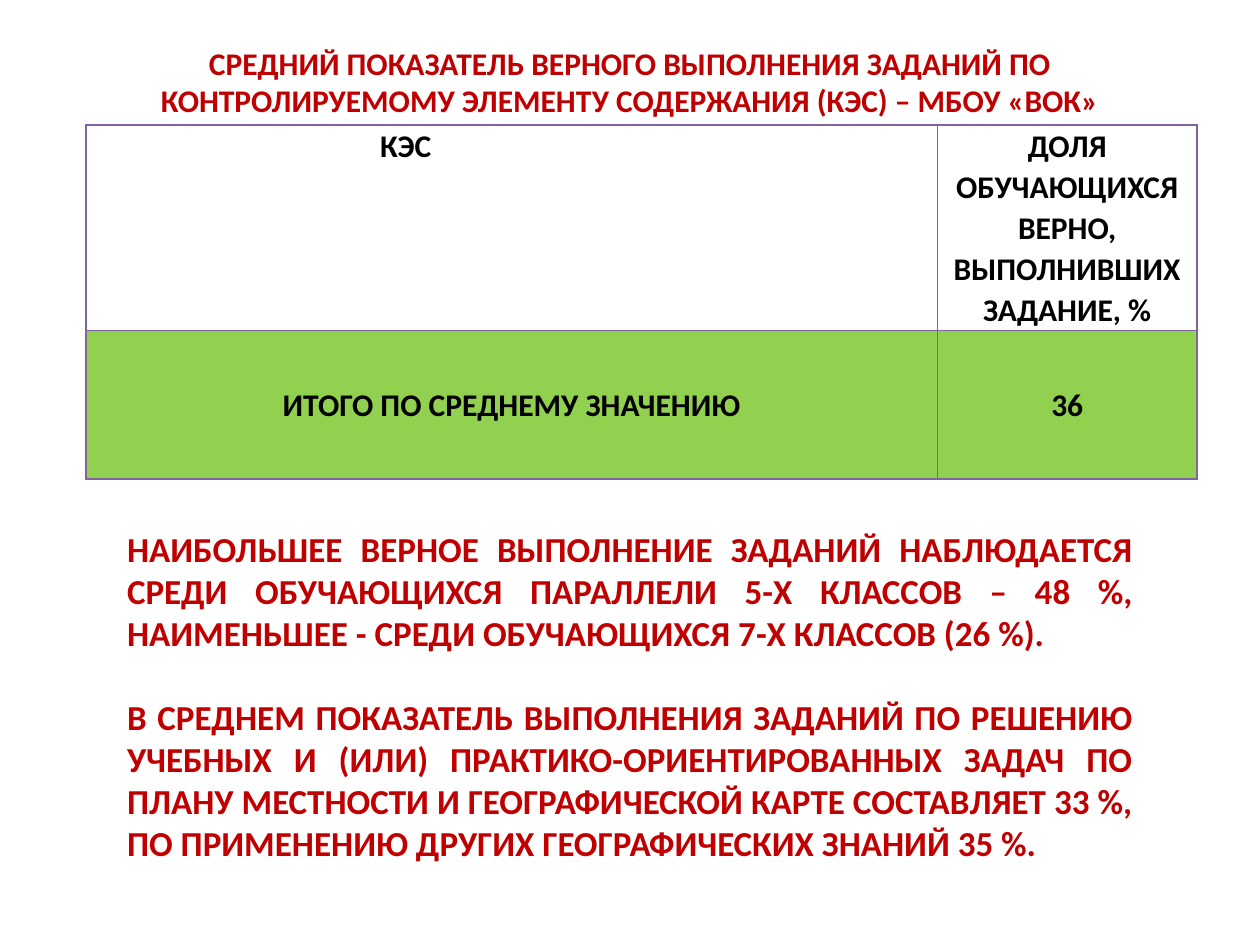
from dataclasses import dataclass

from lxml.etree import SubElement
from pptx import Presentation
from pptx.dml.color import RGBColor
from pptx.enum.text import MSO_ANCHOR, PP_ALIGN
from pptx.oxml.ns import qn
from pptx.slide import Slide
from pptx.table import Table, _Cell
from pptx.text.text import TextFrame
from pptx.util import Pt

RED = RGBColor(0xC0, 0x00, 0x00)
BLACK = RGBColor(0x00, 0x00, 0x00)
WHITE = RGBColor(0xFF, 0xFF, 0xFF)
GREEN = RGBColor(0x92, 0xD0, 0x50)
PURPLE = RGBColor(0x80, 0x64, 0xA2)

COLUMN_WIDTHS = (486.7, 148.3)
ROW_HEIGHTS = (117.7, 84.7)


@dataclass(frozen=True)
class Box:
    """Place of an object on the slide, in points."""

    left: float
    top: float
    width: float
    height: float

    def lengths(self) -> tuple[Pt, Pt, Pt, Pt]:
        """Return the place as lengths."""
        return Pt(self.left), Pt(self.top), Pt(self.width), Pt(self.height)


@dataclass(frozen=True)
class CellContent:
    """Text and look of one table cell."""

    text: str
    fill: RGBColor
    anchor: MSO_ANCHOR = MSO_ANCHOR.TOP
    margin_right: float = 5


TITLE = (
    "СРЕДНИЙ ПОКАЗАТЕЛЬ ВЕРНОГО ВЫПОЛНЕНИЯ ЗАДАНИЙ ПО "
    "КОНТРОЛИРУЕМОМУ ЭЛЕМЕНТУ СОДЕРЖАНИЯ (КЭС) – МБОУ «ВОК»"
)
CONCLUSIONS = (
    "НАИБОЛЬШЕЕ ВЕРНОЕ ВЫПОЛНЕНИЕ ЗАДАНИЙ НАБЛЮДАЕТСЯ СРЕДИ ОБУЧАЮЩИХСЯ "
    "ПАРАЛЛЕЛИ 5-Х КЛАССОВ – 48 %, НАИМЕНЬШЕЕ - СРЕДИ ОБУЧАЮЩИХСЯ "
    "7-Х КЛАССОВ (26 %).\n"
    "В СРЕДНЕМ ПОКАЗАТЕЛЬ ВЫПОЛНЕНИЯ ЗАДАНИЙ ПО РЕШЕНИЮ УЧЕБНЫХ И (ИЛИ) "
    "ПРАКТИКО-ОРИЕНТИРОВАННЫХ ЗАДАЧ ПО ПЛАНУ МЕСТНОСТИ И ГЕОГРАФИЧЕСКОЙ КАРТЕ "
    "СОСТАВЛЯЕТ 33 %, ПО ПРИМЕНЕНИЮ ДРУГИХ ГЕОГРАФИЧЕСКИХ ЗНАНИЙ 35 %."
)
CELLS = (
    (
        CellContent("КЭС", WHITE, margin_right=126),
        CellContent("ДОЛЯ ОБУЧАЮЩИХСЯ ВЕРНО, ВЫПОЛНИВШИХ ЗАДАНИЕ, %", WHITE),
    ),
    (
        CellContent("ИТОГО ПО СРЕДНЕМУ ЗНАЧЕНИЮ", GREEN, MSO_ANCHOR.MIDDLE),
        CellContent("36", GREEN, MSO_ANCHOR.MIDDLE),
    ),
)


def write_text(
    frame: TextFrame,
    text: str,
    *,
    size: float = 18,
    color: RGBColor = BLACK,
    alignment: PP_ALIGN = PP_ALIGN.CENTER,
    line_spacing: float = 1.0,
    gap: float = 0,
) -> None:
    """Write bold paragraphs, one for each line of text."""
    lines = text.split("\n")
    for index, line in enumerate(lines):
        paragraph = frame.paragraphs[0] if index == 0 else frame.add_paragraph()
        paragraph.alignment = alignment
        paragraph.line_spacing = line_spacing
        paragraph.space_after = Pt(gap if index < len(lines) - 1 else 0)
        run = paragraph.add_run()
        run.text = line
        run.font.name = "Calibri"
        run.font.size = Pt(size)
        run.font.bold = True
        run.font.color.rgb = color


def add_text_box(slide: Slide, box: Box, anchor: MSO_ANCHOR) -> TextFrame:
    """Add a wrapping text box and return its text frame."""
    frame = slide.shapes.add_textbox(*box.lengths()).text_frame
    frame.word_wrap = True
    frame.vertical_anchor = anchor
    return frame


def set_borders(cell: _Cell, color: RGBColor, width: float) -> None:
    """Draw a solid line on every side of a cell."""
    properties = cell._tc.get_or_add_tcPr()
    for index, side in enumerate(("lnL", "lnR", "lnT", "lnB")):
        line = SubElement(properties, qn(f"a:{side}"), w=str(Pt(width)))
        fill = SubElement(line, qn("a:solidFill"))
        SubElement(fill, qn("a:srgbClr"), val=str(color))
        properties.insert(index, line)


def fill_cell(cell: _Cell, content: CellContent) -> None:
    """Apply content, fill, margins and borders to a cell."""
    cell.margin_left = Pt(5)
    cell.margin_right = Pt(content.margin_right)
    cell.margin_top = cell.margin_bottom = Pt(0)
    cell.vertical_anchor = content.anchor
    cell.fill.solid()
    cell.fill.fore_color.rgb = content.fill
    set_borders(cell, PURPLE, 1)
    write_text(cell.text_frame, content.text, line_spacing=1.07)


def add_results_table(slide: Slide, left: float, top: float) -> Table:
    """Add the table of results."""
    box = Box(left, top, sum(COLUMN_WIDTHS), sum(ROW_HEIGHTS))
    table = slide.shapes.add_table(
        len(ROW_HEIGHTS), len(COLUMN_WIDTHS), *box.lengths()
    ).table
    for column, width in zip(table.columns, COLUMN_WIDTHS):
        column.width = Pt(width)
    for row, height, contents in zip(table.rows, ROW_HEIGHTS, CELLS):
        row.height = Pt(height)
        for cell, content in zip(row.cells, contents):
            fill_cell(cell, content)
    return table


def main() -> None:
    """Build and save the presentation."""
    presentation = Presentation()
    presentation.slide_width = Pt(720)
    presentation.slide_height = Pt(540)
    slide = presentation.slides.add_slide(presentation.slide_layouts[6])

    title = add_text_box(slide, Box(36, 21.6, 648, 49.7), MSO_ANCHOR.MIDDLE)
    write_text(title, TITLE, color=RED)
    add_results_table(slide, 49, 71.3)
    conclusions = add_text_box(slide, Box(65.5, 298, 589, 201), MSO_ANCHOR.TOP)
    write_text(
        conclusions,
        CONCLUSIONS,
        size=20,
        color=RED,
        alignment=PP_ALIGN.JUSTIFY,
        gap=24,
    )
    presentation.save("out.pptx")


if __name__ == "__main__":
    main()
